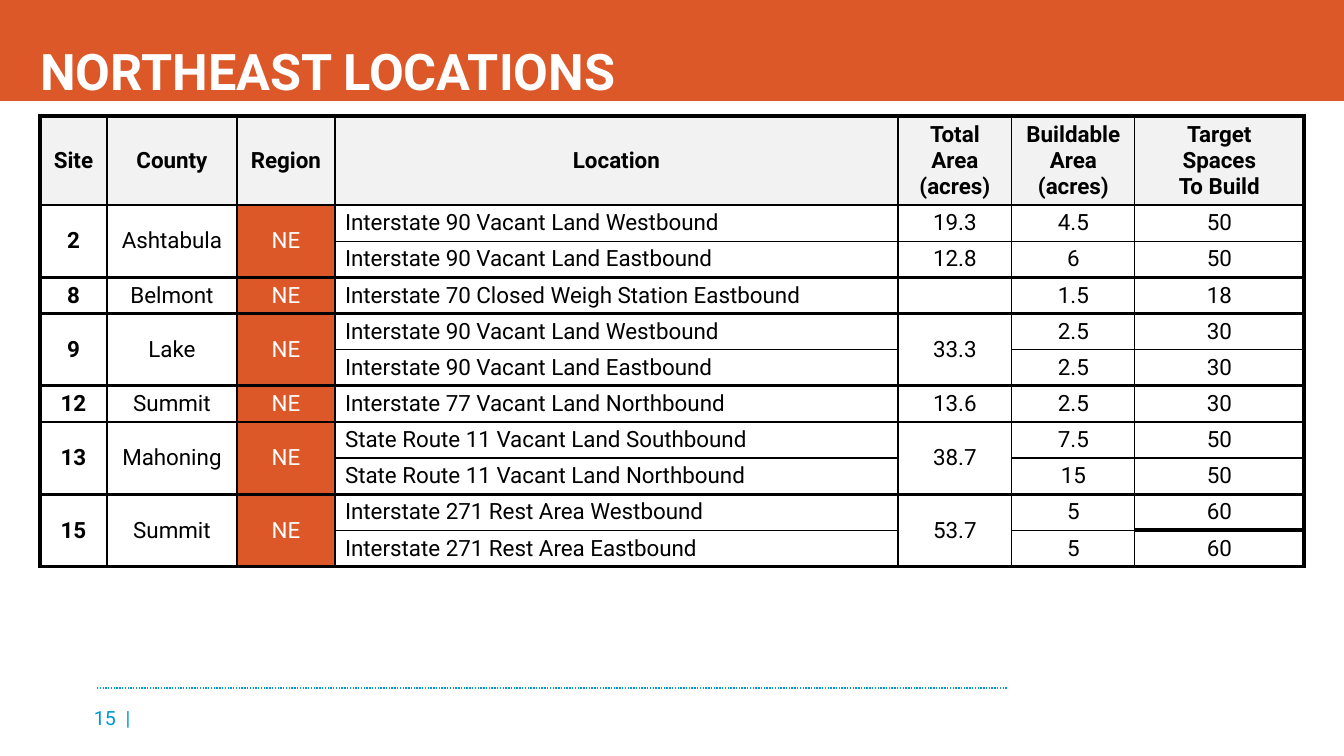
from lxml.etree import SubElement
from pptx import Presentation
from pptx.dml.color import RGBColor
from pptx.enum.dml import MSO_LINE
from pptx.enum.shapes import MSO_CONNECTOR
from pptx.enum.text import MSO_ANCHOR, MSO_AUTO_SIZE, PP_ALIGN
from pptx.oxml import parse_xml
from pptx.oxml.ns import nsdecls, qn
from pptx.util import Pt

PX = 914400 / 100.8
THEME = {
    "font": "Roboto",
    "orange": "DC5829", "blue": "0098D3", "grey": "F2F2F2",
    "black": "000000", "white": "FFFFFF",
    "title": 36, "cell": 16, "foot": 14,
    "thin": 1, "mid": 2.25, "thick": 3,
}


def px(*nums):
    return [round(n * PX) for n in nums]


def style(frame, size, color, bold=False, align=PP_ALIGN.LEFT):
    for para in frame.paragraphs:
        para.alignment = align
        for run in para.runs:
            font = run.font
            font.name = THEME["font"]
            font.size = Pt(THEME[size])
            font.bold = bold
            font.color.rgb = RGBColor.from_string(THEME[color])


deck = Presentation()
deck.slide_width, deck.slide_height = px(1344, 756)
slide = deck.slides.add_slide(deck.slide_layouts[5])

title = slide.shapes.title
title.left, title.top, title.width, title.height = px(0, 0, 1344, 101)
title.fill.solid()
title.fill.fore_color.rgb = RGBColor.from_string(THEME["orange"])
frame = title.text_frame
frame.text = "NORTHEAST LOCATIONS"
frame.auto_size = MSO_AUTO_SIZE.NONE
frame.word_wrap = True
frame.vertical_anchor = MSO_ANCHOR.BOTTOM
frame.margin_left, frame.margin_top, frame.margin_right, frame.margin_bottom = px(40, 10, 40, 0)
style(frame, "title", "white", True)

rows = [
    ("Site", "County", "Region", "Location", "Total\nArea (acres)",
     "Buildable\nArea (acres)", "Target\nSpaces\nTo Build"),
    ("2", "Ashtabula", "NE", "Interstate 90 Vacant Land Westbound", "19.3", "4.5", "50"),
    (None, None, None, "Interstate 90 Vacant Land Eastbound", "12.8", "6", "50"),
    ("8", "Belmont", "NE", "Interstate 70 Closed Weigh Station Eastbound", "", "1.5", "18"),
    ("9", "Lake", "NE", "Interstate 90 Vacant Land Westbound", "33.3", "2.5", "30"),
    (None, None, None, "Interstate 90 Vacant Land Eastbound", None, "2.5", "30"),
    ("12", "Summit", "NE", "Interstate 77 Vacant Land Northbound", "13.6", "2.5", "30"),
    ("13", "Mahoning", "NE", "State Route 11 Vacant Land Southbound", "38.7", "7.5", "50"),
    (None, None, None, "State Route 11 Vacant Land Northbound", None, "15", "50"),
    ("15", "Summit", "NE", "Interstate 271 Rest Area Westbound", "53.7", "5", "60"),
    (None, None, None, "Interstate 271 Rest Area Eastbound", None, "5", "60"),
]
widths = [67, 130, 98, 563, 114, 123, 169]
last = len(rows) - 1
end = len(widths) - 1

rules = ["thick"]
for below in rows[1:]:
    rules.append("thin" if below[0] is None else "mid")
rules.append("thick")

grid = slide.shapes.add_table(len(rows), len(widths), *px(40, 116, sum(widths), 449)).table
grid.first_row = grid.horz_banding = False
for col, width in zip(grid.columns, px(*widths)):
    col.width = width
for row, height in zip(grid.rows, px(89, *[36] * last)):
    row.height = height

for r, row in enumerate(rows):
    for c, text in enumerate(row):
        cell = grid.cell(r, c)
        span = r < last and rows[r + 1][c] is None
        if span:
            cell.merge(grid.cell(r + 1, c))
        region = c == 2 and r > 0
        if r == 0 or region:
            cell.fill.solid()
            cell.fill.fore_color.rgb = RGBColor.from_string(THEME["orange" if region else "grey"])
        else:
            cell.fill.background()
        edges = {
            "L": "thick" if c == 0 else "thin",
            "R": "thick" if c == end else "thin",
            "T": rules[r],
            "B": rules[r + 1 + span],
        }
        if c == end and r == last:
            edges["T"] = "thick"
        if c == end and r == last - 1:
            edges["B"] = "thick"
        props = cell._tc.get_or_add_tcPr()
        for spot, (side, weight) in enumerate(edges.items()):
            props.insert(spot, parse_xml(
                f'<a:ln{side} {nsdecls("a")} w="{Pt(THEME[weight])}"><a:solidFill>'
                f'<a:srgbClr val="{THEME["black"]}"/></a:solidFill></a:ln{side}>'))
        cell.vertical_anchor = MSO_ANCHOR.MIDDLE
        if text is None:
            continue
        cell.text_frame.text = text
        left = c == 3 and r > 0
        style(cell.text_frame, "cell", "white" if region else "black",
              r == 0 or c == 0, PP_ALIGN.LEFT if left else PP_ALIGN.CENTER)
        if text == "":
            mark = SubElement(cell.text_frame.paragraphs[0]._p, qn("a:endParaRPr"),
                              sz=str(THEME["cell"] * 100))
            SubElement(mark, qn("a:latin"), typeface=THEME["font"])

line = slide.shapes.add_connector(MSO_CONNECTOR.STRAIGHT, *px(97, 688, 1007, 688))
line.line.color.rgb = RGBColor.from_string(THEME["blue"])
line.line.width = Pt(THEME["thin"])
line.line.dash_style = MSO_LINE.ROUND_DOT
SubElement(line._element.spPr, qn("a:effectLst"))

foot = slide.shapes.add_textbox(*px(94, 698, 52, 40)).text_frame
foot.margin_left = foot.margin_top = foot.margin_right = foot.margin_bottom = 0
foot.word_wrap = False
foot.vertical_anchor = MSO_ANCHOR.MIDDLE
foot.text = "15  |"
style(foot, "foot", "blue")

deck.save("out.pptx")
